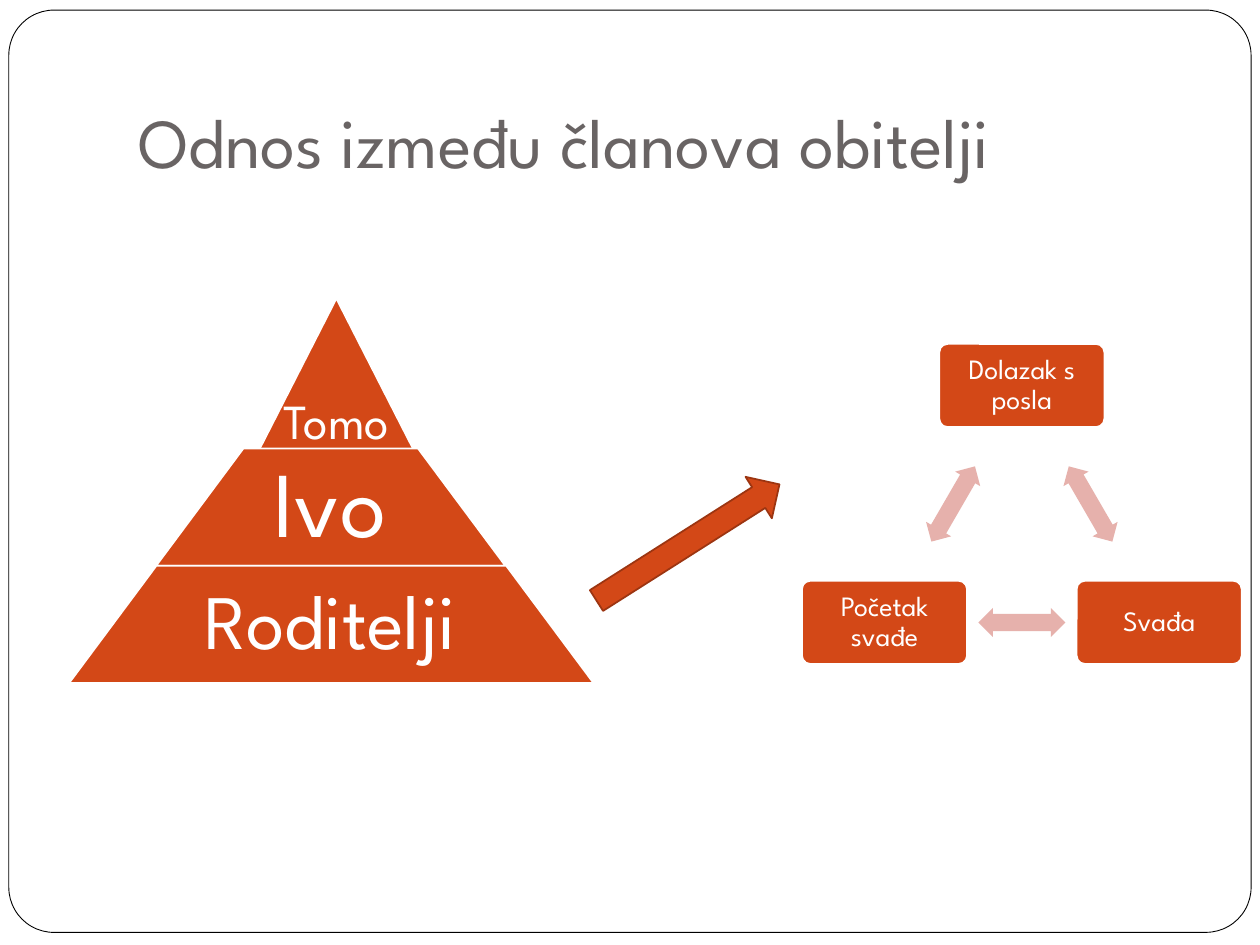
from dataclasses import dataclass
from math import atan2, degrees

from lxml.etree import _Element
from pptx import Presentation
from pptx.dml.color import RGBColor
from pptx.enum.shapes import MSO_SHAPE
from pptx.enum.text import MSO_ANCHOR, PP_ALIGN
from pptx.util import Inches, Pt

FONT = "League Spartan"
COLORS = {
    "white": "FFFFFF",
    "black": "000000",
    "title": "696464",
    "orange": "D34817",
    "dark": "9C3511",
    "pink": "E6B1AC",
}
BOX_W, BOX_H = 1.31, 0.66
LINK_W, LINK_H = 0.69, 0.23


@dataclass
class Rect:
    left: float
    top: float
    width: float
    height: float

    def emu(self) -> list:
        return [Inches(v) for v in (self.left, self.top, self.width, self.height)]


@dataclass
class Tier:
    text: str
    size: int
    shape: Rect
    label: Rect


@dataclass
class Step:
    text: str
    x: float  # centre
    y: float


TIERS = [
    Tier("Tomo", 28, Rect(1.94, 2.37, 1.46, 1.43), Rect(1.94, 3.15, 1.46, 0.42)),
    Tier("Ivo", 53, Rect(1.24, 3.56, 2.77, 0.93), Rect(1.72, 3.56, 1.8, 0.93)),
    Tier("Roditelji", 44, Rect(0.55, 4.49, 4.16, 0.93), Rect(1.27, 4.49, 2.7, 0.93)),
]
STEPS = [
    Step("Dolazak s posla", 8.11, 3.06),
    Step("Svađa", 9.2, 4.94),
    Step("Početak svađe", 7.02, 4.94),
]


def color(name: str) -> RGBColor:
    return RGBColor.from_string(COLORS[name])


def add_shape(s, kind, rect: Rect, fill: str, line: str = "", width: float = 1,
              adj: tuple = (), rotation: float = 0):
    sp = s.shapes.add_shape(kind, *rect.emu())
    sp.shadow.inherit = False
    sp.fill.solid()
    sp.fill.fore_color.rgb = color(fill)
    if line:
        sp.line.color.rgb = color(line)
        sp.line.width = Pt(width)
    else:
        sp.line.fill.background()
    for i, value in enumerate(adj):
        sp.adjustments[i] = value
    sp.rotation = rotation
    return sp


def set_text(sp, text: str, size: float, fill: str, align=PP_ALIGN.CENTER,
             anchor=MSO_ANCHOR.MIDDLE, inset: float = 0.07, spacing: float = 0.9) -> None:
    tf = sp.text_frame
    tf.word_wrap = True
    tf.vertical_anchor = anchor
    tf.margin_left = tf.margin_right = Inches(inset)
    tf.margin_top = tf.margin_bottom = Inches(inset)
    p = tf.paragraphs[0]
    p.text = text
    p.alignment = align
    p.line_spacing = spacing
    font = p.runs[0].font
    font.name, font.size = FONT, Pt(size)
    font.color.rgb = color(fill)


def add_frame(s) -> None:
    """Draw the rounded page border behind everything else."""
    sp = add_shape(s, MSO_SHAPE.ROUNDED_RECTANGLE, Rect(0.07, 0.08, 9.86, 7.32),
                   "white", "black", 0.5, (0.049,))
    element: _Element = sp.element
    element.getparent().insert(2, element)


def add_title(s, text: str) -> None:
    sp = s.shapes.title
    sp.left, sp.top, sp.width, sp.height = Rect(1, 0.3, 8.5, 1.25).emu()
    set_text(sp, text, 40, "title", PP_ALIGN.LEFT, MSO_ANCHOR.BOTTOM, 0.1, 1)


def add_tier(s, tier: Tier) -> None:
    add_shape(s, MSO_SHAPE.TRAPEZOID, tier.shape, "orange", "white", adj=(0.744,))
    label = s.shapes.add_textbox(*tier.label.emu())
    set_text(label, tier.text, tier.size, "white", inset=0)


def add_step(s, step: Step) -> None:
    rect = Rect(step.x - BOX_W / 2, step.y - BOX_H / 2, BOX_W, BOX_H)
    sp = add_shape(s, MSO_SHAPE.ROUNDED_RECTANGLE, rect, "orange", "white", adj=(0.1,))
    set_text(sp, step.text, 16, "white")


def add_link(s, a: Step, b: Step) -> None:
    """Centre a double arrow between two steps, turned along their line."""
    x, y = (a.x + b.x) / 2, (a.y + b.y) / 2
    add_shape(s, MSO_SHAPE.LEFT_RIGHT_ARROW,
              Rect(x - LINK_W / 2, y - LINK_H / 2, LINK_W, LINK_H), "pink",
              adj=(0.6, 0.5), rotation=degrees(atan2(b.y - a.y, b.x - a.x)) % 360)


def main() -> None:
    prs = Presentation()
    prs.slide_width, prs.slide_height = Inches(10), Inches(7.5)
    s = prs.slides.add_slide(prs.slide_layouts[5])
    add_frame(s)
    add_title(s, "Odnos između članova obitelji")
    for tier in TIERS:
        add_tier(s, tier)
    add_shape(s, MSO_SHAPE.RIGHT_ARROW, Rect(4.6, 4.11, 1.72, 0.39),
              "orange", "dark", rotation=327.6)
    for step, following in zip(STEPS, STEPS[1:] + STEPS[:1]):
        add_step(s, step)
        add_link(s, step, following)
    prs.save("out.pptx")


if __name__ == "__main__":
    main()
